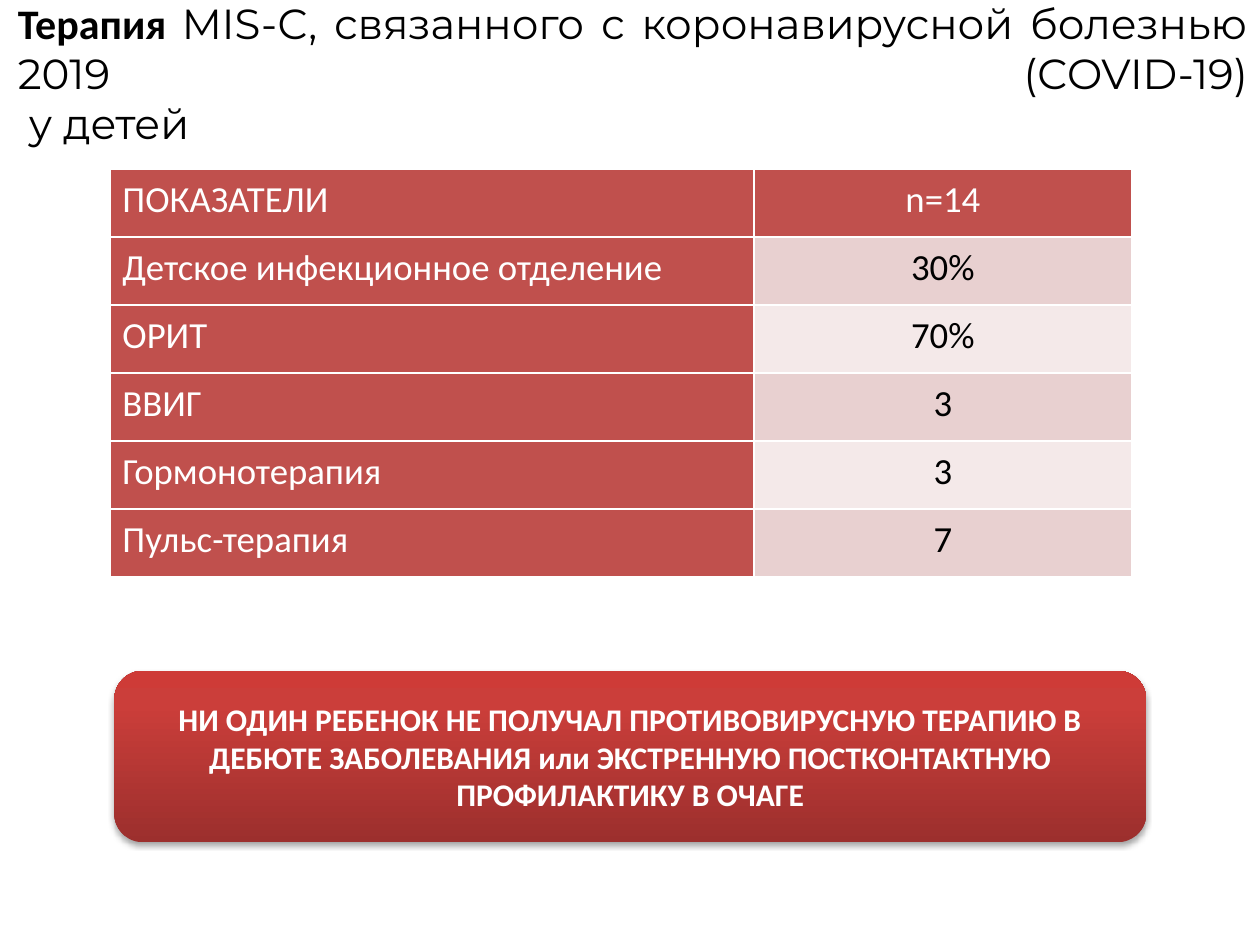
from copy import deepcopy

from lxml import etree
from pptx import Presentation
from pptx.dml import color
from pptx.enum import shapes, text
from pptx.oxml import ns
from pptx.util import Pt

ROWS = [
    ("ПОКАЗАТЕЛИ", "n=14"),
    ("Детское инфекционное отделение", "30%"),
    ("ОРИТ", "70%"),
    ("ВВИГ", "3"),
    ("Гормонотерапия", "3"),
    ("Пульс-терапия", "7"),
]
CONCLUSION = (
    "НИ ОДИН РЕБЕНОК НЕ ПОЛУЧАЛ ПРОТИВОВИРУСНУЮ ТЕРАПИЮ В ДЕБЮТЕ ЗАБОЛЕВАНИЯ "
    "или ЭКСТРЕННУЮ ПОСТКОНТАКТНУЮ ПРОФИЛАКТИКУ В ОЧАГЕ"
)
RED, DARK_BAND, LIGHT_BAND = "C0504D", "E8D0D0", "F4E9E9"
STOPS = [(0, "9C2F2D"), (0.8, "CB3E3A"), (1, "CE3B37")]


def rgb(value):
    return color.RGBColor.from_string(value)


def add_node(parent, tag, **attributes):
    return etree.SubElement(parent, ns.qn(tag), **attributes)


def style_span(span, size, ink, font="Calibri", bold=False):
    span.font.size = Pt(size)
    span.font.name = font
    span.font.bold = bold
    span.font.color.rgb = rgb(ink)


def set_title(page):
    box = page.shapes.title
    box.left, box.top, box.width, box.height = Pt(3), Pt(0), Pt(717), Pt(83)
    frame = box.text_frame
    frame.word_wrap = True
    frame.auto_size = text.MSO_AUTO_SIZE.NONE
    frame.vertical_anchor = text.MSO_ANCHOR.MIDDLE
    para = frame.paragraphs[0]
    para.text = "Терапия "
    para.alignment = text.PP_ALIGN.JUSTIFY
    style_span(para.runs[0], 24, "000000", bold=True)
    span = para.add_run()
    span.text = "MIS-C, связанного с коронавирусной болезнью 2019 (COVID-19)"
    para.add_line_break()
    ending = para.add_run()
    ending.text = " у детей"
    for part in (span, ending):
        style_span(part, 24, "000000", "Montserrat")
    for line_break in para._p.findall(ns.qn("a:br")):
        add_node(line_break, "a:rPr", sz="2400")


def add_borders(cell, ink, width):
    properties = cell._tc.get_or_add_tcPr()
    for side in ("L", "R", "T", "B"):
        line = add_node(properties, f"a:ln{side}", w=str(Pt(width)))
        add_node(add_node(line, "a:solidFill"), "a:srgbClr", val=ink)


def fill_cell(cell, words, fill, ink, align):
    cell.margin_left = cell.margin_right = Pt(7.2)
    cell.margin_top = cell.margin_bottom = Pt(5)
    add_borders(cell, "FFFFFF", 1)
    cell.fill.solid()
    cell.fill.fore_color.rgb = rgb(fill)
    cell.text_frame.text = words
    para = cell.text_frame.paragraphs[0]
    para.alignment = align
    style_span(para.runs[0], 21, ink)


def add_indicators(page):
    table = page.shapes.add_table(
        len(ROWS), 2, Pt(62.8), Pt(96.5), Pt(584), Pt(233.4)
    ).table
    for column, width in zip(table.columns, (368, 216)):
        column.width = Pt(width)
    for index, (label, value) in enumerate(ROWS):
        table.rows[index].height = Pt(38.9)
        fill, ink = DARK_BAND if index % 2 else LIGHT_BAND, "000000"
        if index == 0:
            fill, ink = RED, "FFFFFF"
        fill_cell(table.cell(index, 0), label, RED, "FFFFFF", text.PP_ALIGN.LEFT)
        fill_cell(table.cell(index, 1), value, fill, ink, text.PP_ALIGN.CENTER)


def set_gradient(shape, stops, angle):
    shape.fill.gradient()
    shape.fill.gradient_angle = angle
    stop_list = shape._element.spPr.find(".//" + ns.qn("a:gsLst"))
    for _ in range(len(stops) - len(stop_list)):
        stop_list.append(deepcopy(stop_list[-1]))
    for stop, (position, ink) in zip(shape.fill.gradient_stops, stops):
        stop.position = position
        stop.color.rgb = rgb(ink)


def add_shadow(shape):
    shape.shadow.inherit = False
    effects = shape._element.spPr.find(ns.qn("a:effectLst"))
    shadow = add_node(
        effects, "a:outerShdw", blurRad=str(Pt(3.1)), dist=str(Pt(1.8)),
        dir="5400000", rotWithShape="0",
    )
    ink = add_node(shadow, "a:srgbClr", val="000000")
    add_node(ink, "a:alpha", val="35000")


def add_conclusion(page):
    box = page.shapes.add_shape(
        shapes.MSO_SHAPE.ROUNDED_RECTANGLE, Pt(65.3), Pt(383.3), Pt(589.7), Pt(98)
    )
    set_gradient(box, STOPS, 90)
    box.line.fill.background()
    add_shadow(box)
    frame = box.text_frame
    frame.word_wrap = True
    frame.vertical_anchor = text.MSO_ANCHOR.MIDDLE
    frame.text = CONCLUSION
    para = frame.paragraphs[0]
    para.alignment = text.PP_ALIGN.CENTER
    style_span(para.runs[0], 18, "FFFFFF", bold=True)


def main():
    deck = Presentation()
    deck.slide_width, deck.slide_height = Pt(720), Pt(540)
    page = deck.slides.add_slide(deck.slide_layouts[5])
    set_title(page)
    add_indicators(page)
    add_conclusion(page)
    deck.save("out.pptx")


if __name__ == "__main__":
    main()
